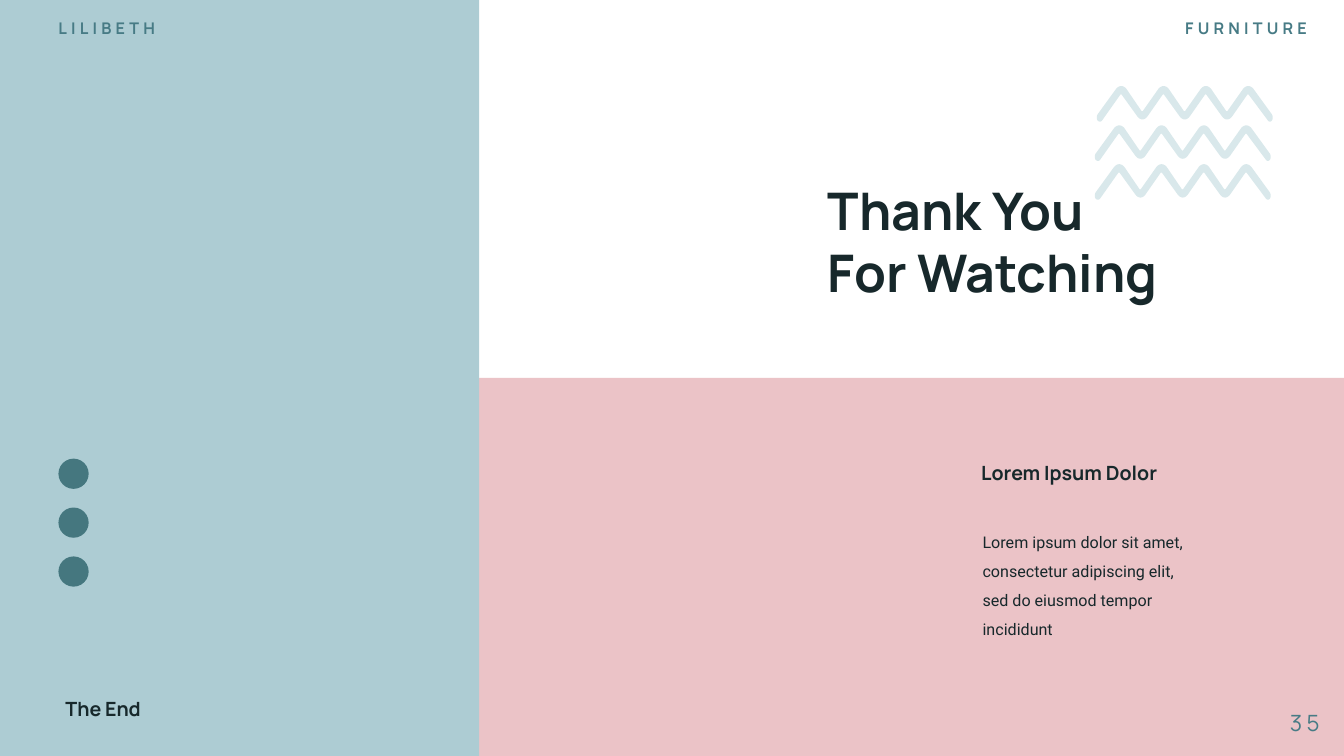
from pptx import Presentation
from pptx.dml.color import RGBColor
from pptx.enum.shapes import MSO_SHAPE as SHAPE
from pptx.enum.text import MSO_AUTO_SIZE as AUTO_SIZE
from pptx.util import Pt

PX = 9144
WHITE = RGBColor(0xFF, 0xFF, 0xFF)
PINK = RGBColor(0xEB, 0xC3, 0xC7)
BLUE = RGBColor(0xAD, 0xCC, 0xD3)
PALE = RGBColor(0xD9, 0xE8, 0xEB)
TEAL = RGBColor(0x47, 0x7B, 0x85)
ICON = RGBColor(0x45, 0x77, 0x7F)
DARK = RGBColor(0x17, 0x28, 0x2B)


def paint(sp, color):
    sp.shadow.inherit = False
    sp.fill.solid()
    sp.fill.fore_color.rgb = color
    sp.line.fill.background()


def curve_points(a, b, c, d, steps=8):
    points = []
    for i in range(steps + 1):
        t = i / steps
        u = 1 - t
        weights = (u ** 3, 3 * u * u * t, 3 * u * t * t, t ** 3)
        points.append(tuple(sum(w * p[k] for w, p in zip(weights, (a, b, c, d)))
                            for k in (0, 1)))
    return points


prs = Presentation()
prs.slide_width = 2667 * PX
prs.slide_height = 1500 * PX
s = prs.slides.add_slide(prs.slide_layouts[6])
s.background.fill.solid()
s.background.fill.fore_color.rgb = WHITE

blocks = [
    (SHAPE.RECTANGLE, 948, 750, 1719, 750, PINK),
    (SHAPE.RECTANGLE, 0, 0, 951, 1500, BLUE),
]
blocks += [(SHAPE.OVAL, 116, 910 + 97 * i, 60, 60, ICON) for i in range(3)]
for kind, x, y, w, h, color in blocks:
    paint(s.shapes.add_shape(kind, x * PX, y * PX, w * PX, h * PX), color)

PITCH = 84
curves = [
    ((1, 56), (-1, 60), (-1, 65), (1, 68)),
    ((1, 68), (4, 71), (8, 71), (10, 68)),
]
for i in range(4):
    x = PITCH * i
    curves.append(((46 + x, 17), (47 + x, 16), (48 + x, 16), (49 + x, 17)))
    if i < 3:
        curves.append(((80 + x, 60), (86 + x, 68), (94 + x, 68), (100 + x, 60)))
curves += [
    ((339, 68), (341, 71), (345, 71), (347, 68)),
    ((347, 68), (349, 65), (349, 60), (347, 56)),
]
for i in reversed(range(4)):
    x = PITCH * i
    curves.append(((58 + x, 5), (52 + x, -2), (44 + x, -2), (38 + x, 5)))
    if i > 0:
        curves.append(((7 + x, 49), (6 + x, 50), (5 + x, 50), (4 + x, 49)))
outline = [point for curve in curves for point in curve_points(*curve)]

waves = s.shapes.add_group_shape()
for left, top in [(2173, 326), (2173, 249), (2177, 171)]:
    points = [((left + x) * PX, (top + y) * PX) for x, y in outline]
    builder = waves.shapes.build_freeform(*points[0])
    builder.add_line_segments(points[1:], close=True)
    paint(builder.convert_to_shape(), PALE)

texts = [
    (1937, 909, 381, 57, ["Lorem Ipsum Dolor"], 28, "Manrope", DARK, True, 0, False, 1),
    (1940, 1033, 456, 236,
     ["Lorem ipsum dolor sit amet, consectetur adipiscing elit, sed do eiusmod tempor incididunt"],
     23, "Roboto", DARK, False, 0, True, 1.5),
    (106, 31, 223, 49, ["LILIBETH"], 23, "Manrope", TEAL, True, 6, False, 1),
    (120, 1377, 173, 57, ["The End"], 28, "Manrope", DARK, True, 0, False, 1),
    (2550, 1403, 109, 64, ["35"], 32, "Manrope", TEAL, False, 6, True, 1),
    (2342, 31, 275, 49, ["FURNITURE"], 23, "Manrope", TEAL, True, 6, False, 1),
    (1633, 349, 701, 259, ["Thank You", "For Watching"], 74, "Manrope", DARK, True, 0, False, 1),
]
for x, y, w, h, lines, size, font, color, bold, spacing, wrap, leading in texts:
    tf = s.shapes.add_textbox(x * PX, y * PX, w * PX, h * PX).text_frame
    tf.word_wrap = wrap
    tf.auto_size = AUTO_SIZE.SHAPE_TO_FIT_TEXT
    for i, line in enumerate(lines):
        p = tf.add_paragraph() if i else tf.paragraphs[0]
        p.line_spacing = float(leading)
        r = p.add_run()
        r.text = line
        r.font.name = font
        r.font.size = Pt(size)
        r.font.bold = bold
        r.font.color.rgb = color
        if spacing:
            r._r.get_or_add_rPr().set("spc", str(spacing * 100))

prs.save("out.pptx")
